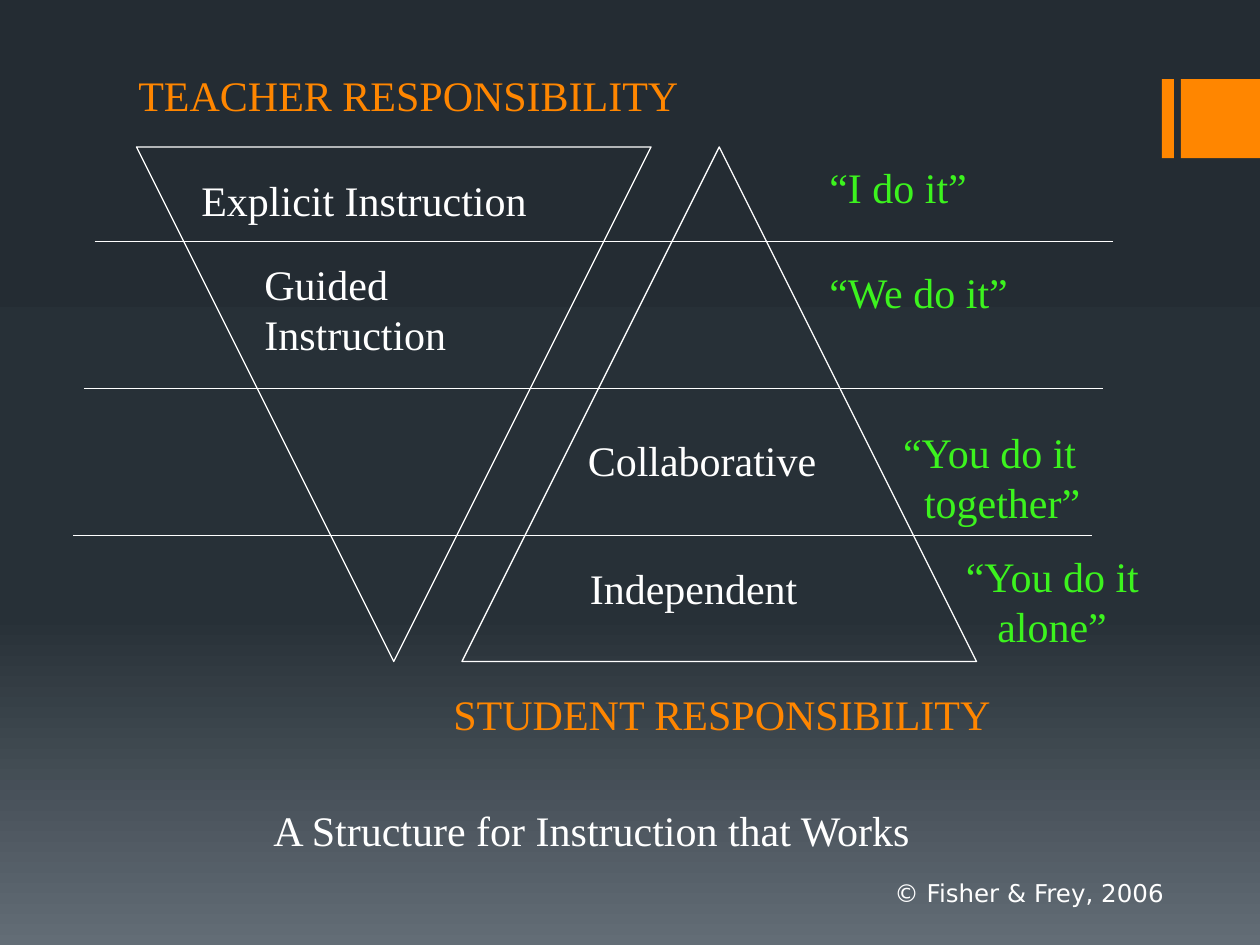
from copy import deepcopy
from lxml.etree import SubElement
from pptx import Presentation
from pptx.dml.color import RGBColor
from pptx.enum.shapes import MSO_CONNECTOR, MSO_SHAPE
from pptx.enum.text import MSO_ANCHOR, MSO_AUTO_SIZE, PP_ALIGN
from pptx.oxml.ns import qn
from pptx.util import Pt

ORANGE = RGBColor(0xFF, 0x86, 0x00)
GREEN = RGBColor(0x3C, 0xF3, 0x1E)
WHITE = RGBColor(0xFF, 0xFF, 0xFF)
BACKGROUND = [
    (0, RGBColor(0x24, 0x2C, 0x33)),
    (0.65, RGBColor(0x27, 0x30, 0x37)),
    (1, RGBColor(0x63, 0x6D, 0x76)),
]
SERIF = "Times New Roman"


def write(box, lines, color, size=24, font=SERIF, indent=0):
    frame = box.text_frame
    frame.word_wrap = True
    frame.auto_size = MSO_AUTO_SIZE.NONE
    frame.vertical_anchor = MSO_ANCHOR.TOP
    for index, line in enumerate(lines):
        para = frame.add_paragraph() if index else frame.paragraphs[0]
        para.alignment = PP_ALIGN.LEFT
        if index:
            para._p.get_or_add_pPr().set("marL", str(Pt(indent)))
        span = para.add_run()
        span.text = line
        span.font.name = font
        span.font.size = Pt(size)
        span.font.color.rgb = color


deck = Presentation()
deck.slide_width, deck.slide_height = Pt(720), Pt(540)
page = deck.slides.add_slide(deck.slide_layouts[5])

fill = page.background.fill
fill.gradient()
fill.gradient_angle = 270
stop_list = next(page._element.iter(qn("a:gsLst")))
stop_list.insert(1, deepcopy(stop_list[0]))
for stop, (position, color) in zip(fill.gradient_stops, BACKGROUND):
    stop.position = position
    stop.color.rgb = color

for left, width in [(664, 6.8), (674.8, 45.2)]:
    bar = page.shapes.add_shape(MSO_SHAPE.RECTANGLE, Pt(left), Pt(45.2), Pt(width), Pt(45.2))
    bar.shadow.inherit = False
    bar.fill.solid()
    bar.fill.fore_color.rgb = ORANGE
    bar.line.fill.background()

for left, rotation in [(264, 0), (78, 180)]:
    triangle = page.shapes.add_shape(
        MSO_SHAPE.ISOSCELES_TRIANGLE, Pt(left), Pt(84), Pt(294), Pt(294))
    triangle.rotation = rotation
    triangle.shadow.inherit = False
    triangle.fill.background()
    triangle.line.color.rgb = WHITE
    triangle.line.width = Pt(0.75)

for step in range(3):
    left, top = 54 - 6 * step, 138 + 84 * step
    divider = page.shapes.add_connector(
        MSO_CONNECTOR.STRAIGHT, Pt(left), Pt(top), Pt(left + 582), Pt(top))
    divider.line.color.rgb = WHITE
    divider.line.width = Pt(0.75)
    SubElement(divider._element.spPr, qn("a:effectLst"))

labels = [
    (72, 36, 330, ["TEACHER RESPONSIBILITY"], ORANGE, 0),
    (252, 390, 342, ["STUDENT RESPONSIBILITY"], ORANGE, 0),
    (108, 96, 222, ["Explicit Instruction"], WHITE, 0),
    (144, 144, 168, ["Guided Instruction"], WHITE, 0),
    (328.8, 244.8, 148, ["Collaborative"], WHITE, 0),
    (330, 318, 136, ["Independent"], WHITE, 0),
    (466.8, 88.6, 96, ["“I do it”"], GREEN, 0),
    (466.8, 148.8, 122, ["“We do it”"], GREEN, 0),
    (509, 240, 124, ["“You do it", "together”"], GREEN, 12),
    (544.8, 310.8, 118, ["“You do it", "alone”"], GREEN, 18),
]
for left, top, width, lines, color, indent in labels:
    height = 64.8 if len(lines) > 1 or lines[0].startswith("Guided") else 36
    box = page.shapes.add_textbox(Pt(left), Pt(top), Pt(width), Pt(height))
    write(box, lines, color, indent=indent)

title = page.shapes.title
title.left, title.top, title.width, title.height = Pt(149), Pt(456), Pt(382), Pt(36)
write(title, ["A Structure for Instruction that Works"], WHITE)

credit = page.shapes.add_textbox(Pt(504), Pt(498), Pt(216), Pt(24))
write(credit, ["© Fisher & Frey, 2006"], WHITE, 14, "DejaVu Sans")

deck.save("out.pptx")
